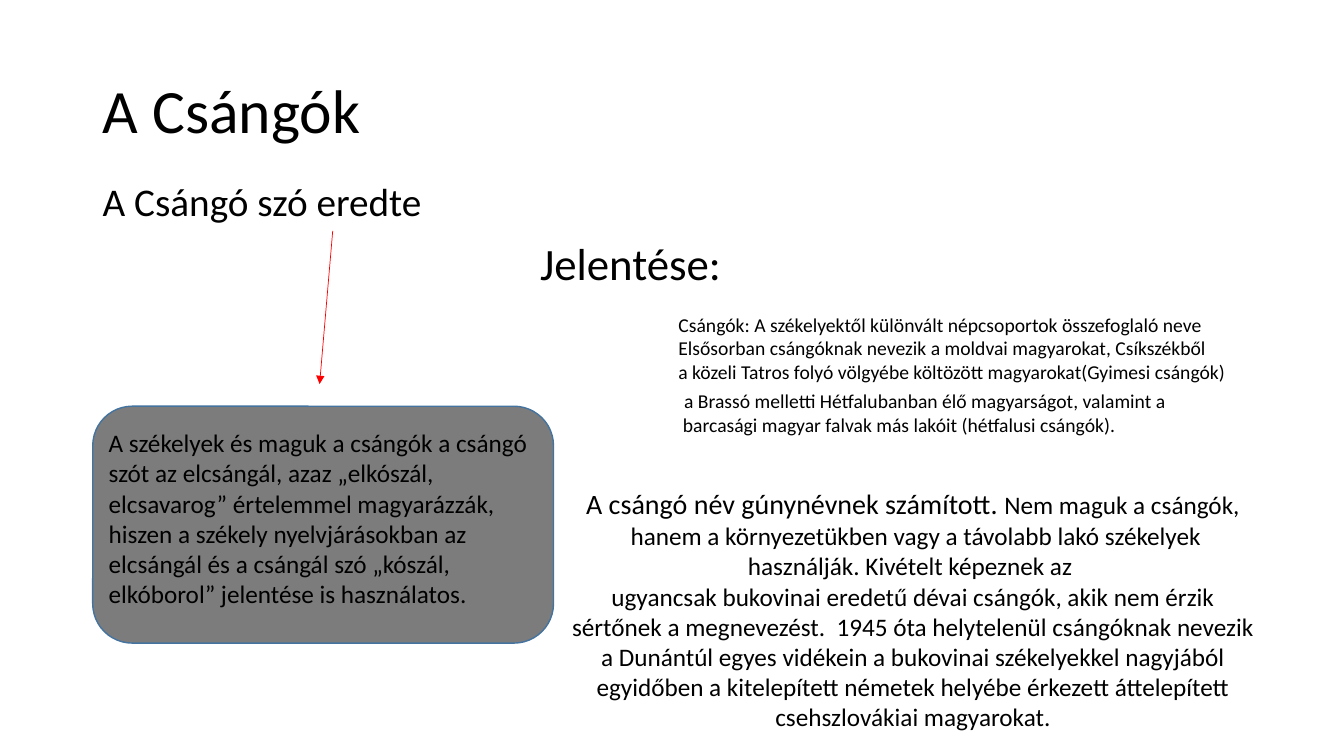
from lxml.etree import SubElement
from pptx import Presentation
from pptx.dml.color import RGBColor
from pptx.enum.shapes import MSO_CONNECTOR, MSO_SHAPE
from pptx.enum.text import MSO_ANCHOR as Anchor, MSO_AUTO_SIZE as AutoSize, PP_ALIGN as Align
from pptx.oxml.ns import qn
from pptx.util import Inches, Pt

COLORS = {"text": "000000", "panel": "7C7C7C", "panel_edge": "43739E", "arrow": "FF0000"}
FONT = "Calibri"
WIDTH, HEIGHT = 13.33, 7.5
MARGIN = 0.92

ORIGIN = (
    "A székelyek és maguk a csángók a csángó szót az elcsángál, azaz "
    "„elkószál, elcsavarog” értelemmel magyarázzák, hiszen a székely "
    "nyelvjárásokban az elcsángál és a csángál szó „kószál, elkóborol” jelentése is "
    "használatos."
)
MEANING = [
    ("Csángók: A székelyektől különvált népcsoportok összefoglaló neve\n"
     "Elsősorban csángóknak nevezik a moldvai magyarokat, Csíkszékből  \n"
     "a közeli Tatros folyó völgyébe költözött magyarokat(Gyimesi csángók)\n", 14),
    (" ", 18),
    ("a Brassó melletti Hétfalubanban élő magyarságot, valamint a\n"
     " barcasági magyar falvak más lakóit (hétfalusi csángók). ", 14),
]
NICKNAME = [
    ("A csángó név gúnynévnek számított. ", 20),
    ("Nem maguk a csángók,\n"
     " hanem a környezetükben vagy a távolabb lakó székelyek használják. "
     "Kivételt képeznek az \n"
     "ugyancsak bukovinai eredetű dévai csángók, akik nem érzik sértőnek a "
     "megnevezést.  1945 óta helytelenül csángóknak nevezik a Dunántúl egyes "
     "vidékein a bukovinai székelyekkel nagyjából egyidőben a kitelepített németek "
     "helyébe érkezett áttelepített csehszlovákiai magyarokat.", 18),
]


def color(name):
    return RGBColor.from_string(COLORS[name])


def write(frame, runs, align=Align.LEFT, spacing=1.0, **frame_format):
    """Fill a text frame with (text, size) runs in one paragraph."""
    for key, value in frame_format.items():
        setattr(frame, key, value)
    paragraph = frame.paragraphs[0]
    paragraph.alignment, paragraph.line_spacing = align, spacing
    for text, size in runs:
        for number, line in enumerate(text.split("\n")):
            if number:
                paragraph.add_line_break()
            if line:
                run = paragraph.add_run()
                run.text = line
                for key, value in {"size": Pt(size), "name": FONT}.items():
                    setattr(run.font, key, value)
                run.font.color.rgb = color("text")


def add_text(slide, box, runs, wrap=True, **text_format):
    frame = slide.shapes.add_textbox(*map(Inches, box)).text_frame
    write(frame, runs, word_wrap=wrap, **text_format)


def add_heading(slide, box):
    left, top, width, height = box
    title = slide.shapes.title
    place = {"left": left, "top": top, "width": width, "height": height}
    for key, value in place.items():
        setattr(title, key, Inches(value))
    write(title.text_frame, [("A Csángók", 44)], spacing=0.9,
          vertical_anchor=Anchor.MIDDLE, auto_size=AutoSize.NONE)


def add_arrow(slide, start, end):
    arrow = slide.shapes.add_connector(MSO_CONNECTOR.STRAIGHT, *map(Inches, start + end))
    arrow.line.color.rgb = color("arrow")
    arrow.line.width = Pt(0.5)
    SubElement(arrow.line._get_or_add_ln(), qn("a:tailEnd"), type="triangle")
    SubElement(arrow._element.spPr, qn("a:effectLst"))


def add_origin(slide, box):
    """Subheading, arrow and the grey panel that explains the word."""
    left, top, width, height = box
    panel_height = 2.35
    panel_top = top + height - panel_height
    add_text(slide, (left, top, 7.22, 1.07), [("A Csángó szó eredte", 28)], spacing=0.9)
    add_arrow(slide, (left + 2.38, top + 0.53), (left + 2.25, panel_top - 0.22))

    panel = slide.shapes.add_shape(
        MSO_SHAPE.ROUNDED_RECTANGLE, *map(Inches, (left, panel_top, width, panel_height)))
    panel.shadow.inherit = False
    panel.fill.solid()
    panel.fill.fore_color.rgb = color("panel")
    panel.line.color.rgb = color("panel_edge")
    panel.line.width = Pt(1)
    add_text(slide, (left + 0.06, panel_top + 0.16, width - 0.07, 2.22), [(ORIGIN, 18)])


def add_meaning(slide, box):
    """Heading, definition and the note on the nickname."""
    left, top, width, height = box
    note_height = 2.56
    add_text(slide, (left + 1.38, top + 0.76, 5.69, 1.35), MEANING, wrap=False)
    add_text(slide, (left, top, 2.01, 0.64), [("Jelentése:", 32)],
             wrap=False, align=Align.CENTER)
    add_text(slide, (left + 0.3, top + height - note_height, width - 0.3, note_height),
             NICKNAME, align=Align.CENTER)


def main():
    deck = Presentation()
    deck.slide_width, deck.slide_height = Inches(WIDTH), Inches(HEIGHT)
    slide = deck.slides.add_slide(deck.slide_layouts[5])
    add_heading(slide, (MARGIN, 0.4, WIDTH - 2 * MARGIN, 1.45))
    add_origin(slide, (MARGIN, 1.76, 4.57, 4.62))
    add_meaning(slide, (5.25, 2.29, 7.31, 5.05))
    deck.save("out.pptx")


if __name__ == "__main__":
    main()
